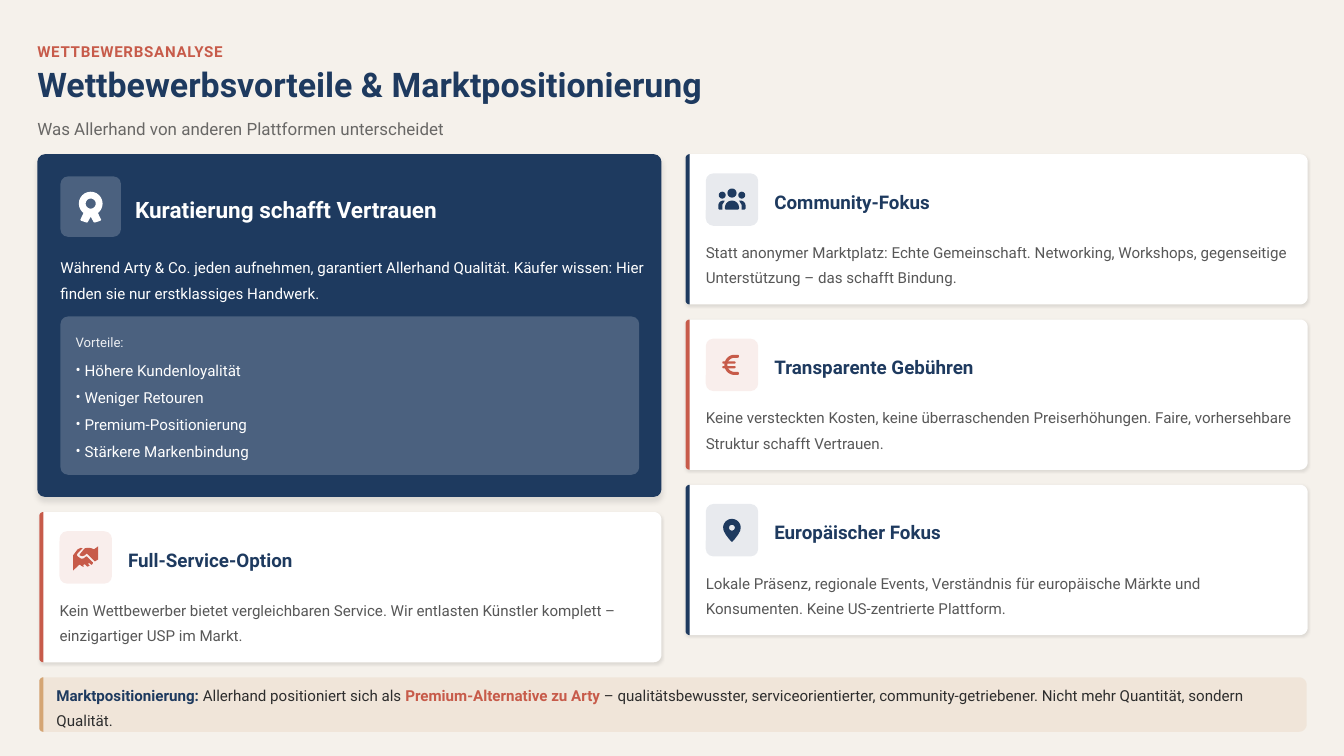
from math import cos, sin, radians
from lxml.etree import SubElement
from pptx import Presentation
from pptx.dml.color import RGBColor
from pptx.enum.shapes import MSO_SHAPE as Preset
from pptx.enum.text import MSO_ANCHOR as Anchor
from pptx.oxml.ns import qn
from pptx.util import Inches, Pt

NAVY, RED, GOLD, WHITE, DARK = "1E3A5F", "C75B4A", "D4A574", "FFFFFF", "2D2D2D"
FONT = "Roboto"

HEADER = [  # text, top, height, line spacing, format
    ("WETTBEWERBSANALYSE", 0.37, 0.22, 1.3, dict(size=10.8, color=RED, bold=True, tracking=50)),
    ("Wettbewerbsvorteile & Marktpositionierung", 0.67, 0.37, 0.9, dict(size=24.2, color=NAVY, bold=True)),
    ("Was Allerhand von anderen Plattformen unterscheidet", 1.12, 0.26, 1.3,
     dict(size=12.1, color=DARK, alpha=70)),
]
HERO_TITLE = "Kuratierung schafft Vertrauen"
HERO_TEXT = ("Während Arty & Co. jeden aufnehmen, garantiert Allerhand Qualität. "
             "Käufer wissen: Hier finden sie nur erstklassiges Handwerk.")
BENEFITS_LABEL = "Vorteile:"
BENEFITS = ["Höhere Kundenloyalität", "Weniger Retouren", "Premium-Positionierung", "Stärkere Markenbindung"]
SERVICE_CARD = ("Full-Service-Option", RED, "handshake",
                "Kein Wettbewerber bietet vergleichbaren Service. Wir entlasten Künstler komplett – "
                "einzigartiger USP im Markt.")
RIGHT_CARDS = [
    ("Community-Fokus", NAVY, "people",
     "Statt anonymer Marktplatz: Echte Gemeinschaft. Networking, Workshops, gegenseitige "
     "Unterstützung – das schafft Bindung."),
    ("Transparente Gebühren", RED, "euro",
     "Keine versteckten Kosten, keine überraschenden Preiserhöhungen. Faire, vorhersehbare "
     "Struktur schafft Vertrauen."),
    ("Europäischer Fokus", NAVY, "pin",
     "Lokale Präsenz, regionale Events, Verständnis für europäische Märkte und Konsumenten. "
     "Keine US-zentrierte Plattform."),
]
BANNER_RUNS = [
    ("Marktpositionierung:", dict(color=NAVY, bold=True)),
    (" Allerhand positioniert sich als ", dict(color=DARK)),
    ("Premium-Alternative zu Arty", dict(color=RED, bold=True)),
    (" – qualitätsbewusster, serviceorientierter, community-getriebener. "
     "Nicht mehr Quantität, sondern Qualität.", dict(color=DARK)),
]


def arc(x, y, radius, start, end, steps=24):
    """Points on a circle, angles in degrees, clockwise from the right."""
    angles = [radians(start + (end - start) * i / steps) for i in range(steps + 1)]
    return [(x + radius * cos(a), y + radius * sin(a)) for a in angles]


def circle(x, y, radius):
    return arc(x, y, radius, 0, 360)


def mirror(points):
    return [(-x, y) for x, y in points]


def euro_bar(y):
    return arc(-8.5, y, 1.1, 90, 270) + arc(2.5, y, 1.1, -90, 90)


SIDE_PERSON = arc(-8.5, 6, 5, 180, 285) + [(-9.5, 5), (-9.5, 10), (-12.5, 10), (-13.5, 9)]
PIN_SIDE = [(8.2, 0.5), (6, 4.5), (3, 8.5), (0.8, 11)]
# Each icon is a list of parts, each part a list of contours, in 0.01 inch from the badge centre.
ICONS = {
    "award": [
        [circle(0, -3, 11.8), circle(0, -3, 5)],
        [[(-7, 6), (-10.3, 13), (-9.6, 14), (-4.2, 15.8), (-3, 15.5), (0, 10),
          (3, 15.5), (4.2, 15.8), (9.6, 14), (10.3, 13), (7, 6)]],
    ],
    "handshake": [
        [[(-1, -9), (-6, -3), (-6, -2), (-3.5, -1.2), (-1, -2), (0.8, -3.8), (1.8, -3.2), (9, 4),
          (12.4, 2), (12.4, -11), (8, -8), (6, -9), (4, -9.4), (1, -9.4)]],
        [[(-8, -4), (-3, -9.2), (-5, -9.4), (-8, -8), (-12.5, -2), (-12.5, 13), (-6, 7), (-4, 8.6),
          (-2, 9.4), (-2.3, 7.6), (-1.6, 6.8), (-0.4, 7.2), (1.6, 9.2), (4, 8.2), (2.8, 6.8),
          (2.8, 5.8), (3.8, 5.8), (5.8, 7.4), (7, 6.4), (7.2, 5), (1, -1), (0, -0.6), (-2, 1),
          (-4.5, 1.3), (-8, -1), (-8.8, -2.5)]],
    ],
    "people": [
        [circle(0, -6.5, 4.5)], [circle(-9.7, -4.4, 3.4)], [circle(9.7, -4.4, 3.4)],
        [arc(0, 8, 7, 180, 360) + [(7, 9), (6, 10), (-6, 10), (-7, 9)]],
        [SIDE_PERSON], [mirror(SIDE_PERSON)],
    ],
    "euro": [
        [arc(2.5, 0, 10, 270, 90) + arc(5.5, 8.5, 1.5, 90, -90)
         + arc(2.5, 0, 7, 90, 270) + arc(5.5, -8.5, 1.5, 90, -90)],
        [euro_bar(-2.3)], [euro_bar(2.3)],
    ],
    "pin": [[arc(0, -2.5, 8.7, 180, 360) + PIN_SIDE + [(0, 11.5)] + mirror(PIN_SIDE[::-1]),
             circle(0, -2.5, 2.9)]],
}


def set_color(fill, color, alpha=100):
    fill.solid()
    fill.fore_color.rgb = RGBColor.from_string(color)
    if alpha < 100:
        for node in fill._xPr.iter(qn("a:srgbClr")):
            SubElement(node, qn("a:alpha"), val=str(alpha * 1000))


def paint(shape, color, alpha=100, shadow=None):
    """Fill without outline; shadow is (blur, distance) in points."""
    set_color(shape.fill, color, alpha)
    shape.line.fill.background()
    shape.shadow.inherit = False
    if shadow:
        effects = shape._element.spPr.find(qn("a:effectLst"))
        outer = SubElement(effects, qn("a:outerShdw"), blurRad=str(Pt(shadow[0])),
                           dist=str(Pt(shadow[1])), dir="5400000", algn="ctr", rotWithShape="0")
        black = SubElement(outer, qn("a:srgbClr"), val="000000")
        SubElement(black, qn("a:alpha"), val="10000")


def add_outline(contours, color, **look):
    """Closed outline through points given in inches."""
    rings = [[(Inches(x), Inches(y)) for x, y in ring] for ring in contours]
    builder = slide.shapes.build_freeform(*rings[0][0], scale=1.0)
    for index, ring in enumerate(rings):
        if index:
            builder.move_to(*ring[0])
        builder.add_line_segments(ring[1:], close=True)
    paint(builder.convert_to_shape(), color, **look)


def add_panel(x, y, width, height, color, **look):
    shape = slide.shapes.add_shape(Preset.ROUNDED_RECTANGLE, *map(Inches, (x, y, width, height)))
    shape.adjustments[0] = 0.075 / min(width, height)
    paint(shape, color, **look)


def add_striped_panel(x, y, width, height, color, stripe, **look):
    edge, corner = 0.04, 0.075
    right, bottom = x + width, y + height
    left_side = arc(x + edge, bottom - edge, edge, 90, 180, 8) + arc(x + edge, y + edge, edge, 180, 270, 8)
    right_side = (arc(right - corner, y + corner, corner, -90, 0, 8)
                  + arc(right - corner, bottom - corner, corner, 0, 90, 8))
    add_outline([left_side + right_side], color, **look)
    add_outline([left_side], stripe)


def add_badge(x, y, size, color, alpha, icon):
    add_panel(x, y, size, size, color, alpha=alpha)
    for part in ICONS[icon]:
        add_outline([[(x + size / 2 + px / 100, y + size / 2 + py / 100) for px, py in ring]
                     for ring in part], color)


def add_text(x, y, width, height, paragraphs, spacing, bullet=False, wrap=True, **base):
    """Each paragraph is a string or a list of (text, format) runs."""
    frame = slide.shapes.add_textbox(*map(Inches, (x, y, width, height))).text_frame
    settings = dict(word_wrap=wrap, vertical_anchor=Anchor.MIDDLE,
                    margin_left=0, margin_top=0, margin_right=0, margin_bottom=0)
    for name, value in settings.items():
        setattr(frame, name, value)
    for index, content in enumerate(paragraphs):
        paragraph = frame.add_paragraph() if index else frame.paragraphs[0]
        paragraph.line_spacing = spacing
        if bullet:
            if index:
                paragraph.space_before = Pt(2.4)
            properties = paragraph._p.get_or_add_pPr()
            properties.set("marL", str(Inches(0.09)))
            properties.set("indent", str(-Inches(0.09)))
            SubElement(properties, qn("a:buFont"), typeface=FONT)
            SubElement(properties, qn("a:buChar"), char="•")
        for text, extra in [(content, {})] if isinstance(content, str) else content:
            look = {**base, **extra}
            run = paragraph.add_run()
            run.text = text
            font_values = dict(name=FONT, size=Pt(look["size"]), bold=look.get("bold", False))
            for name, value in font_values.items():
                setattr(run.font, name, value)
            set_color(run.font.fill, look["color"], look.get("alpha", 100))
            if "tracking" in look:
                run.font._element.set("spc", str(look["tracking"]))


def add_card(x, y, title, accent, icon, text):
    add_striped_panel(x, y, 6.17, 1.49, WHITE, accent, shadow=(2, 0.7))
    add_badge(x + 0.2, y + 0.19, 0.52, accent, 10, icon)
    add_text(x + 0.88, y + 0.32, 3, 0.26, [title], 1.2, wrap=False, size=13.4, color=NAVY, bold=True)
    add_text(x + 0.2, y + 0.82, 5.85, 0.49, [text], 1.4, size=10.8, color=DARK, alpha=80)


presentation = Presentation()
presentation.slide_width, presentation.slide_height = Inches(13.33), Inches(7.5)
slide = presentation.slides.add_slide(presentation.slide_layouts[6])
set_color(slide.background.fill, "F5F1EB")

for text, top, height, spacing, look in HEADER:
    add_text(0.37, top, 12.66, height, [text], spacing, **look)

add_panel(0.37, 1.53, 6.19, 3.4, NAVY, shadow=(4, 2.7))
add_badge(0.6, 1.75, 0.6, WHITE, 20, "award")
add_text(1.34, 1.92, 4, 0.3, [HERO_TITLE], 1.1, wrap=False, size=16.1, color=WHITE, bold=True)
add_text(0.6, 2.5, 5.81, 0.49, [HERO_TEXT], 1.4, size=10.8, color=WHITE)
add_panel(0.6, 3.14, 5.74, 1.57, WHITE, alpha=20)
add_text(0.75, 3.28, 5.51, 0.19, [BENEFITS_LABEL], 1.2, size=9.4, color=WHITE, alpha=90)
add_text(0.75, 3.55, 5.51, 1, BENEFITS, 1.3, bullet=True, size=10.8, color=WHITE)

add_card(0.39, 5.08, *SERVICE_CARD)
for index, card in enumerate(RIGHT_CARDS):
    add_card(6.8, 1.53 + 1.64 * index, *card)

add_striped_panel(0.39, 6.72, 12.57, 0.54, GOLD, GOLD, alpha=15)
add_text(0.56, 6.87, 12.33, 0.24, [BANNER_RUNS], 1.4, wrap=False, size=10.8)

presentation.save("out.pptx")
